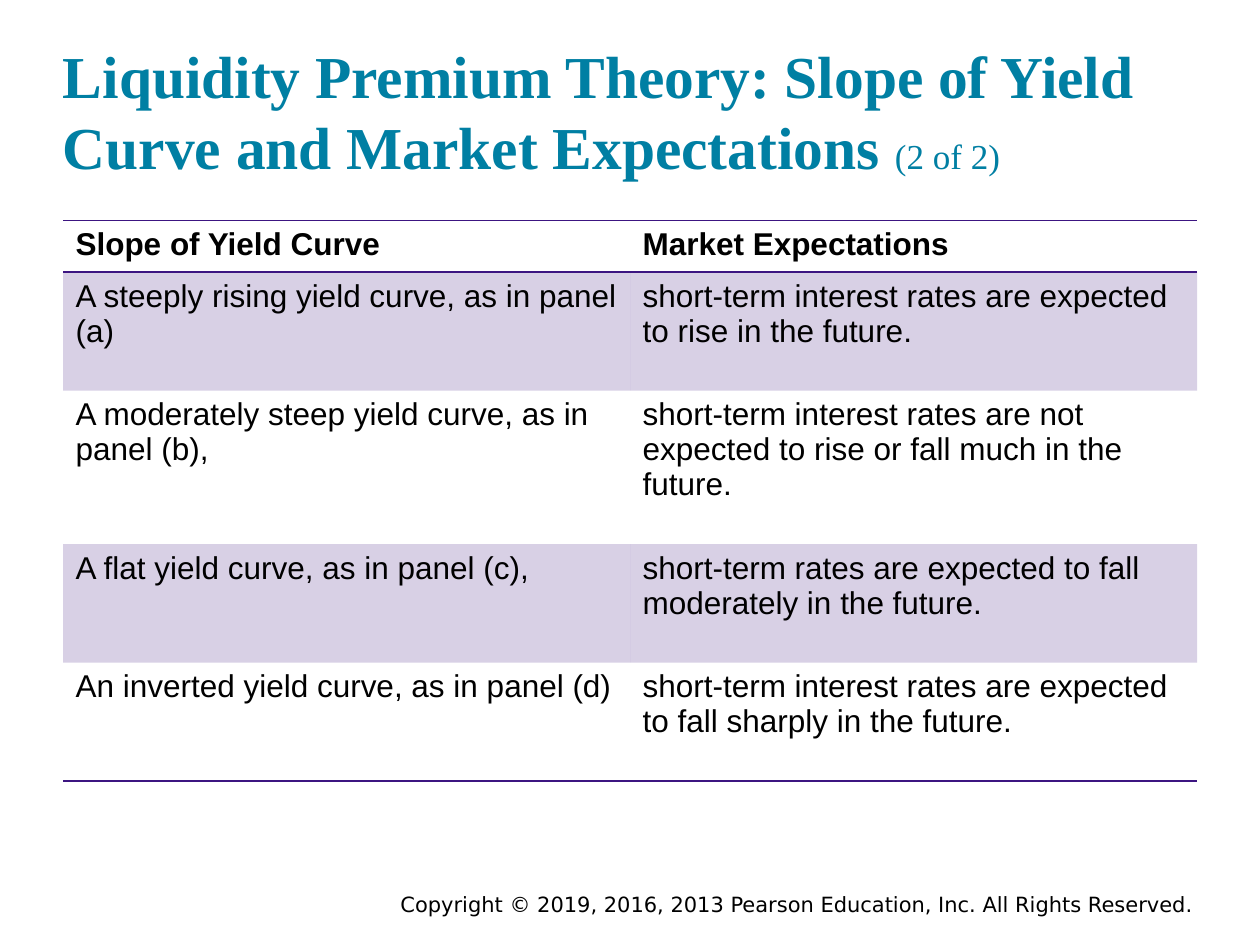
from lxml.etree import SubElement
from pptx import Presentation
from pptx.dml.color import RGBColor as RGB
from pptx.enum.text import MSO_ANCHOR as ANCHOR, PP_ALIGN as ALIGN
from pptx.oxml.ns import qn
from pptx.util import Inches, Pt

COLORS = {"title": "007FA3", "text": "000000", "accent": "3C1581"}


class SlideBuilder:
    """Holds the style and the current slide."""

    def __init__(self, prs):
        self.slide = prs.slides.add_slide(prs.slide_layouts[6])
        self.body = {"name": "Arial", "size": Pt(18), "bold": False}
        self.title = {"name": "Times New Roman", "size": Pt(34), "bold": True}
        self.footer = {"name": "DejaVu Sans", "size": Pt(12)}

    def run(self, p, text, color, fmt):
        r = p.add_run()
        r.text = text
        r.font.color.rgb = RGB.from_string(COLORS[color])
        for key, value in fmt.items():
            setattr(r.font, key, value)

    def text(self, box, runs, color, frame, align=ALIGN.LEFT):
        tf = self.slide.shapes.add_textbox(*map(Inches, box)).text_frame
        for key, value in frame.items():
            setattr(tf, key, value)
        p = tf.paragraphs[0]
        p.alignment = align
        for text, fmt in runs:
            self.run(p, text, color, fmt)

    def border(self, cell, side, visible):
        tc_pr = cell._tc.get_or_add_tcPr()
        ln = SubElement(tc_pr, qn(f"a:ln{side}"), w=str(Pt(1)))
        if visible:
            fill = SubElement(ln, qn("a:solidFill"))
            SubElement(fill, qn("a:srgbClr"), val=COLORS["accent"])
        else:
            SubElement(ln, qn("a:noFill"))

    def shade(self, cell, opacity):
        cell.fill.solid()
        cell.fill.fore_color.rgb = RGB.from_string(COLORS["accent"])
        clr = cell._tc.tcPr.find(qn("a:solidFill")).find(qn("a:srgbClr"))
        SubElement(clr, qn("a:alpha"), val=str(opacity * 1000))

    def table(self, box, rows, heights):
        shape = self.slide.shapes.add_table(
            len(rows), len(rows[0]), *map(Inches, box))
        table = shape.table
        table.first_row = table.horz_banding = False
        last = len(rows) - 1
        for i, (texts, height) in enumerate(zip(rows, heights)):
            table.rows[i].height = Inches(height)
            # Rules above and below the header, and below the last row
            ruled = {"T": i in (0, 1), "B": i in (0, last)}
            for j, text in enumerate(texts):
                cell = table.cell(i, j)
                self.run(cell.text_frame.paragraphs[0], text, "text",
                         {**self.body, "bold": i == 0})
                for side in "LRTB":
                    self.border(cell, side, ruled.get(side, False))
                if i % 2:
                    self.shade(cell, 20)
                else:
                    cell.fill.background()


def main():
    prs = Presentation()
    prs.slide_width, prs.slide_height = Inches(10), Inches(7.5)
    s = SlideBuilder(prs)

    # Copyright line
    s.text((2.95, 7.03, 6.75, 0.3),
           [("Copyright © 2019, 2016, 2013 Pearson Education, Inc. "
             "All Rights Reserved.", s.footer)],
           "text", {"word_wrap": True}, ALIGN.CENTER)

    # Title
    margins = {f"margin_{side}": 0 for side in ("left", "right", "top", "bottom")}
    s.text((0.5, 0.24, 9, 1.2),
           [("Liquidity Premium Theory: Slope of Yield Curve and "
             "Market Expectations ", s.title),
            ("(2 of 2)", {**s.title, "size": Pt(20), "bold": False})],
           "title",
           {"word_wrap": True, "vertical_anchor": ANCHOR.BOTTOM, **margins})

    # Slopes and what they imply
    rows = [
        ("Slope of Yield Curve", "Market Expectations"),
        ("A steeply rising yield curve, as in panel (a)",
         "short-term interest rates are expected to rise in the future."),
        ("A moderately steep yield curve, as in panel (b),",
         "short-term interest rates are not expected to rise or fall much "
         "in the future."),
        ("A flat yield curve, as in panel (c),",
         "short-term rates are expected to fall moderately in the future."),
        ("An inverted yield curve, as in panel (d)",
         "short-term interest rates are expected to fall sharply in the future."),
    ]
    heights = (0.41, 0.94, 1.22, 0.94, 0.94)
    s.table((0.5, 1.75, 9, sum(heights)), rows, heights)

    prs.save("out.pptx")


if __name__ == "__main__":
    main()
